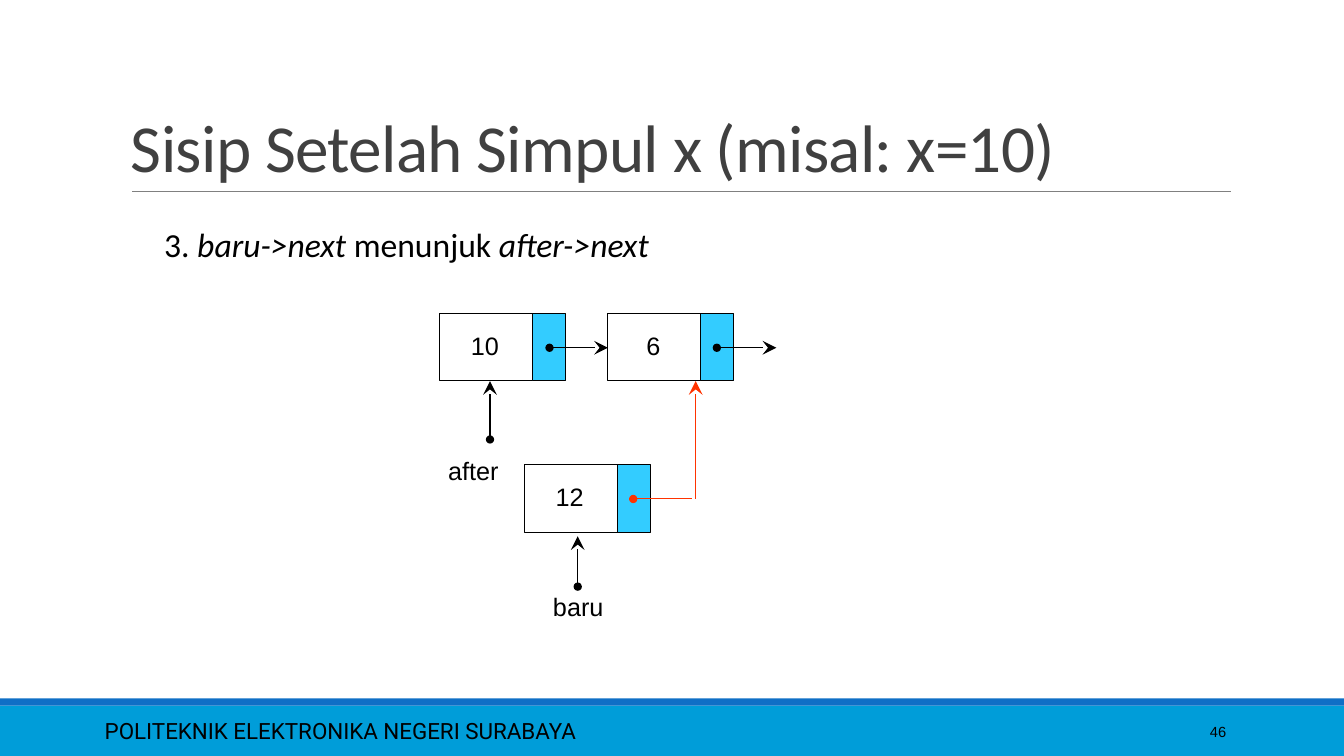
"""Build the linked-list insertion slide, step 3."""
from dataclasses import dataclass

from lxml import etree
from pptx import Presentation
from pptx.dml.color import RGBColor
from pptx.enum import shapes, text
from pptx.oxml import ns
from pptx.util import Inches, Pt

BLACK = RGBColor(0, 0, 0)
GREY = RGBColor(0x40, 0x40, 0x40)
RULE = RGBColor(0x80, 0x80, 0x80)
SKY = RGBColor(0x33, 0xCC, 0xFF)
RED = RGBColor(0xFF, 0x33, 0x00)
BAND = RGBColor(0x00, 0x9D, 0xD9)
EDGE = RGBColor(0x0F, 0x6F, 0xC6)
LEFT, MID, RIGHT = text.PP_ALIGN.LEFT, text.PP_ALIGN.CENTER, text.PP_ALIGN.RIGHT
TOP, CENTER, BASE = text.MSO_ANCHOR.TOP, text.MSO_ANCHOR.MIDDLE, text.MSO_ANCHOR.BOTTOM
DATA_W, LINK_W, NODE_H = 0.92, 0.33, 0.67


@dataclass
class Label:
    words: str
    x: float
    y: float
    w: float
    h: float = 0.4
    size: float = 18
    font: str = "Arial"
    color: RGBColor = BLACK
    align: text.PP_ALIGN = MID
    anchor: text.MSO_ANCHOR = TOP


@dataclass
class Node:
    value: str
    x: float
    y: float


@dataclass
class Line:
    x1: float
    y1: float
    x2: float
    y2: float
    color: RGBColor = BLACK
    width: float = 0.75
    dot: bool = True
    tip: bool = True


LABELS = [
    Label("POLITEKNIK ELEKTRONIKA NEGERI SURABAYA", 0.94, 7.05, 8.41, size=16,
          font="Roboto", align=LEFT, anchor=CENTER),
    Label("46", 10.83, 7.06, 1.43, size=10.5, align=RIGHT, anchor=CENTER),
    Label("after", 4.11, 4.47, 1.17),
    Label("baru", 5.15, 5.82, 1.17),
]
NODES = [Node("10", 4.36, 3.11), Node("6", 6.03, 3.11), Node("12", 5.2, 4.61)]
LINES = [
    Line(1.31, 1.9, 12.21, 1.9, RULE, 0.5, dot=False, tip=False),
    Line(5.45, 3.45, 6.03, 3.45),
    Line(7.11, 3.45, 7.7, 3.45),
    Line(4.86, 4.36, 4.86, 3.78),
    Line(5.73, 5.82, 5.73, 5.32),
    Line(6.28, 4.95, 6.86, 4.95, RED, tip=False),
    Line(6.9, 4.95, 6.9, 3.78, RED, dot=False),
]
STEP = [("3. ", False), ("baru->next ", True), ("menunjuk ", False), ("after->next", True)]


def draw_box(slide, x: float, y: float, w: float, h: float,
             fill: RGBColor | None, edge: RGBColor | None = None) -> None:
    """Draw a rectangle with an optional fill and outline."""
    box = slide.shapes.add_shape(shapes.MSO_SHAPE.RECTANGLE,
                                 Inches(x), Inches(y), Inches(w), Inches(h))
    box.shadow.inherit = False
    if fill is None:
        box.fill.background()
    else:
        box.fill.solid()
        box.fill.fore_color.rgb = fill
    if edge is None:
        box.line.fill.background()
    else:
        box.line.color.rgb = edge
        box.line.width = Pt(0.75)


def draw_label(slide, label: Label):
    """Draw a text box and return its paragraph."""
    box = slide.shapes.add_textbox(Inches(label.x), Inches(label.y),
                                   Inches(label.w), Inches(label.h))
    frame = box.text_frame
    frame.word_wrap = True
    frame.vertical_anchor = label.anchor
    frame.text = label.words
    para = frame.paragraphs[0]
    para.alignment = label.align
    for run in para.runs:
        style(run, label)
    return para


def style(run, label: Label) -> None:
    """Give a run the font of its label."""
    run.font.name = label.font
    run.font.size = Pt(label.size)
    run.font.color.rgb = label.color


def draw_node(slide, node: Node) -> None:
    """Draw a list node with its value and link cell."""
    draw_box(slide, node.x, node.y, DATA_W, NODE_H, None, BLACK)
    draw_box(slide, node.x + DATA_W, node.y, LINK_W, NODE_H, SKY, BLACK)
    draw_label(slide, Label(node.value, node.x + 0.2, node.y + 0.12, 0.5))


def draw_line(slide, line: Line) -> None:
    """Draw a line with an optional start dot and arrow tip."""
    link = slide.shapes.add_connector(shapes.MSO_CONNECTOR.STRAIGHT, Inches(line.x1),
                                      Inches(line.y1), Inches(line.x2), Inches(line.y2))
    link.line.color.rgb = line.color
    link.line.width = Pt(line.width)
    props = link._element.spPr
    stroke = props.find(ns.qn("a:ln"))
    if line.dot:
        etree.SubElement(stroke, ns.qn("a:headEnd"), type="oval", w="med", len="med")
    if line.tip:
        etree.SubElement(stroke, ns.qn("a:tailEnd"), type="stealth", w="lg", len="lg")
    etree.SubElement(props, ns.qn("a:effectLst"))


def draw_title(slide) -> None:
    """Draw the slide title."""
    para = draw_label(slide, Label("Sisip Setelah Simpul x (misal: x=10)", 1.2, 0.31, 11,
                                   1.59, 48, "Calibri", GREY, LEFT, BASE))
    para.line_spacing = 0.85
    para.runs[0].font._element.set("spc", "-50")


def draw_step(slide) -> None:
    """Draw the step sentence with its italic terms."""
    label = Label("", 1.53, 2.17, 6.17, 0.5, 24, "Calibri", align=LEFT)
    para = draw_label(slide, label)
    props = para._p.get_or_add_pPr()
    props.set("marL", str(Inches(0.38)))
    props.set("indent", str(Inches(-0.38)))
    for words, slant in STEP:
        run = para.add_run()
        run.text = words
        style(run, label)
        run.font.italic = slant


def main() -> None:
    """Build and save the slide."""
    deck = Presentation()
    deck.slide_width, deck.slide_height = Inches(13.33), Inches(7.5)
    slide = deck.slides.add_slide(deck.slide_layouts[6])
    draw_box(slide, 0, 7, 13.33, 0.5, BAND)
    draw_box(slide, 0, 6.93, 13.33, 0.07, EDGE)
    draw_title(slide)
    draw_step(slide)
    for node in NODES:
        draw_node(slide, node)
    for label in LABELS:
        draw_label(slide, label)
    for line in LINES:
        draw_line(slide, line)
    deck.save("out.pptx")


if __name__ == "__main__":
    main()
